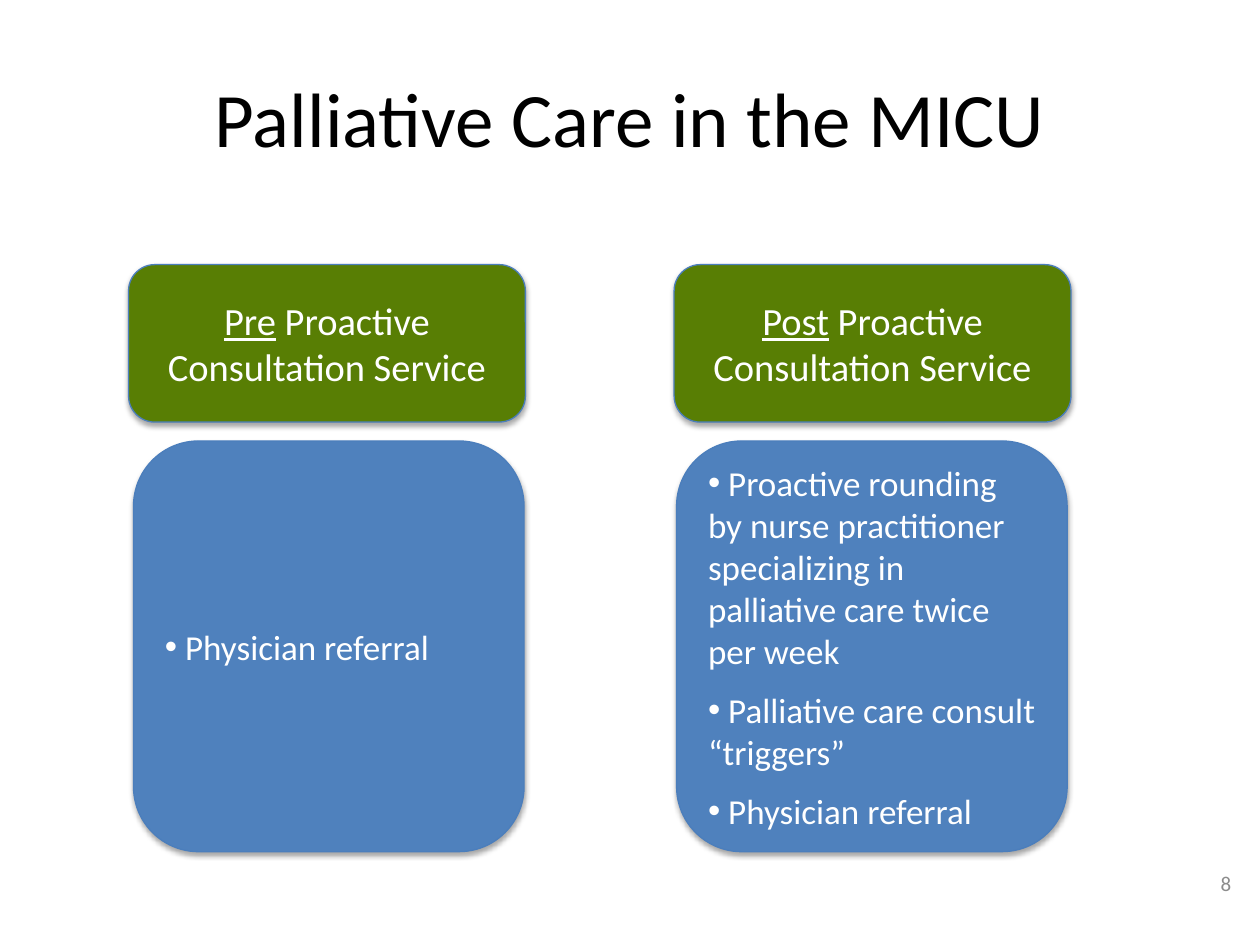
from dataclasses import dataclass

from lxml import etree
from pptx import Presentation
from pptx.dml.color import RGBColor
from pptx.enum import shapes, text
from pptx.oxml import ns
from pptx.util import Inches, Pt

TITLE = "Palliative Care in the MICU"
PAGE_NUMBER = "8"
COLUMNS = [
    ("Pre", ["Physician referral"]),
    ("Post", [
        "Proactive rounding by nurse practitioner specializing in "
        "palliative care twice per week",
        "Palliative care consult “triggers”",
        "Physician referral",
    ]),
]
HEADER_ENDING = " Proactive Consultation Service"


@dataclass(frozen=True)
class Theme:
    font: str = "Calibri"
    title_size: int = 44
    header_size: int = 22
    body_size: int = 20
    number_size: int = 12
    black: str = "000000"
    white: str = "FFFFFF"
    gray: str = "8C8C8C"
    green: str = "587E04"
    blue: str = "4F81BD"
    outline: str = "4B7EBC"


THEME = Theme()

# Column grid, in inches: left edge and step for each row of cards
HEADER_ROW = dict(left=1.02, step=4.33, top=2.1, width=3.15, height=1.25)
BODY_ROW = dict(left=1.06, step=4.31, top=3.5, width=3.1, height=3.26)


def place(shape, left, top, width, height):
    shape.left, shape.top = Inches(left), Inches(top)
    shape.width, shape.height = Inches(width), Inches(height)


def format_text(shape, size, color, alignment):
    frame = shape.text_frame
    frame.word_wrap = True
    frame.vertical_anchor = text.MSO_ANCHOR.MIDDLE
    for paragraph in frame.paragraphs:
        paragraph.alignment = alignment
        for run in paragraph.runs:
            run.font.name = THEME.font
            run.font.size = Pt(size)
            run.font.color.rgb = RGBColor.from_string(color)


def add_soft_shadow(shape):
    shape.shadow.inherit = False
    effects = shape._element.spPr.find(ns.qn("a:effectLst"))
    shadow = etree.SubElement(
        effects, ns.qn("a:outerShdw"), blurRad=str(Pt(3.1)),
        dist=str(Pt(1.8)), dir="5400000", rotWithShape="0")
    color = etree.SubElement(shadow, ns.qn("a:srgbClr"), val=THEME.black)
    etree.SubElement(color, ns.qn("a:alpha"), val="35000")


def add_card(slide, row, column, fill):
    card = slide.shapes.add_shape(
        shapes.MSO_SHAPE.ROUNDED_RECTANGLE,
        Inches(row["left"] + column * row["step"]), Inches(row["top"]),
        Inches(row["width"]), Inches(row["height"]))
    card.fill.solid()
    card.fill.fore_color.rgb = RGBColor.from_string(fill)
    card.line.color.rgb = RGBColor.from_string(THEME.outline)
    card.line.width = Pt(0.75)
    add_soft_shadow(card)
    return card


def add_header(slide, column, period):
    card = add_card(slide, HEADER_ROW, column, THEME.green)
    paragraph = card.text_frame.paragraphs[0]
    for words in (period, HEADER_ENDING):
        paragraph.add_run().text = words
    paragraph.runs[0].font.underline = True
    format_text(card, THEME.header_size, THEME.white, text.PP_ALIGN.CENTER)


def add_body(slide, column, items):
    card = add_card(slide, BODY_ROW, column, THEME.blue)
    card.text_frame.text = "\n".join(" " + item for item in items)
    format_text(card, THEME.body_size, THEME.white, text.PP_ALIGN.LEFT)
    for index, paragraph in enumerate(card.text_frame.paragraphs):
        paragraph.space_before = Pt(9.75 if index else 0)
        properties = paragraph._p.get_or_add_pPr()
        etree.SubElement(properties, ns.qn("a:buFont"), typeface="Arial")
        etree.SubElement(properties, ns.qn("a:buChar"), char="•")


def main():
    presentation = Presentation()
    presentation.slide_width, presentation.slide_height = Inches(10), Inches(7.5)
    slide = presentation.slides.add_slide(presentation.slide_layouts[5])

    title = slide.shapes.title
    place(title, 0.5, 0.3, 9, 1.25)
    title.text_frame.text = TITLE
    format_text(title, THEME.title_size, THEME.black, text.PP_ALIGN.CENTER)

    number = slide.shapes.add_textbox(0, 0, 0, 0)
    place(number, 9.2, 6.76, 0.67, 0.5)
    number.text_frame.text = PAGE_NUMBER
    format_text(number, THEME.number_size, THEME.gray, text.PP_ALIGN.RIGHT)

    for column, (period, items) in enumerate(COLUMNS):
        add_header(slide, column, period)
        add_body(slide, column, items)

    presentation.save("out.pptx")


if __name__ == "__main__":
    main()
